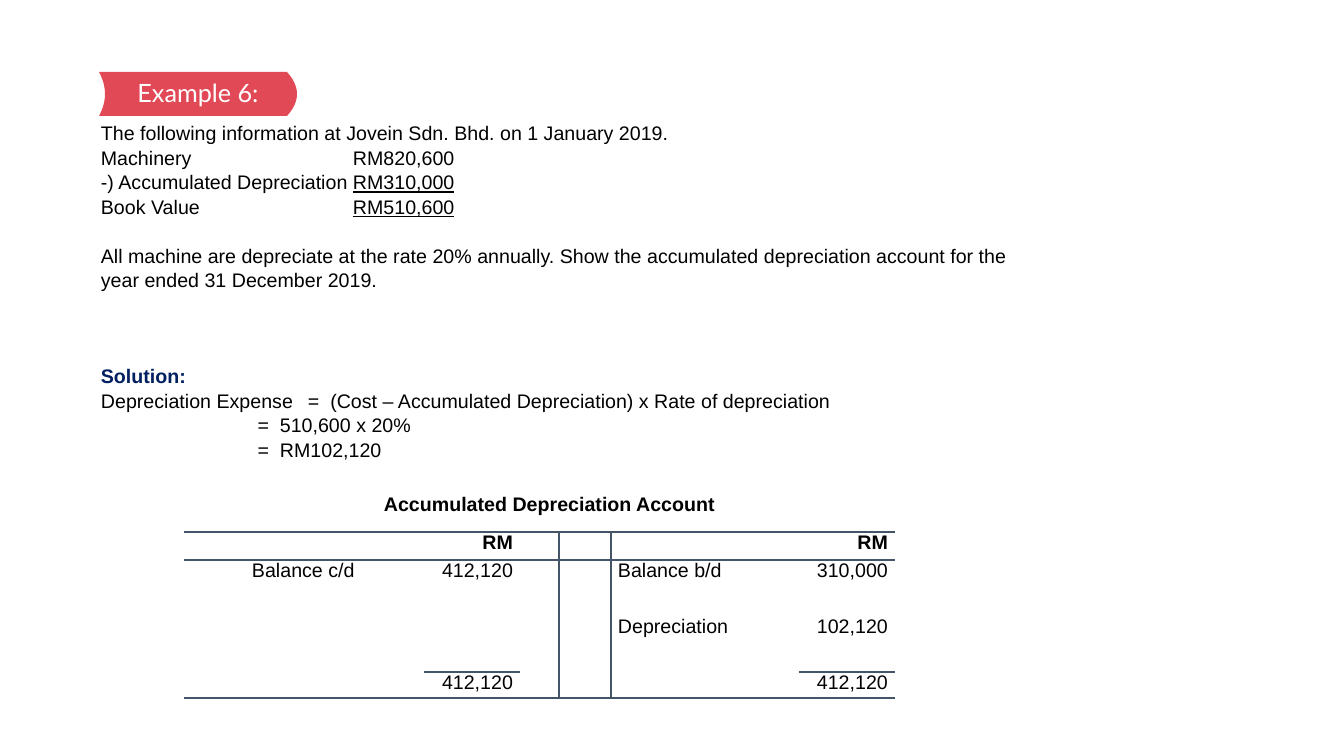
from lxml import etree
from pptx import Presentation
from pptx.dml.color import RGBColor
from pptx.enum.shapes import MSO_SHAPE
from pptx.enum.text import MSO_ANCHOR, PP_ALIGN
from pptx.oxml.ns import qn
from pptx.util import Pt

SCALE = 9144000 / 1008
RECTANGLE = MSO_SHAPE.RECTANGLE
TOP, MIDDLE = MSO_ANCHOR.TOP, MSO_ANCHOR.MIDDLE
LEFT, CENTER = PP_ALIGN.LEFT, PP_ALIGN.CENTER
RIGHT, JUSTIFY = PP_ALIGN.RIGHT, PP_ALIGN.JUSTIFY

WHITE, BLACK, NAVY, RED, SLATE = "FFFFFF", "000000", "002060", "E24956", "445469"

QUESTION = [
    (0, [("The following information at Jovein Sdn. Bhd. on 1 January 2019.", {})]),
    (0, [("Machinery\t\t\t\tRM820,600", {})]),
    (0, [("-) Accumulated Depreciation\t", {}), ("RM310,000", {"underline": True})]),
    (0, [("Book Value\t\t\t\t", {}), ("RM510,600", {"underline": True})]),
    (24, [("All machine are depreciate at the rate 20% annually. Show the accumulated "
           "depreciation account for the year ended 31 December 2019.", {})]),
    (71, [("Solution:", {"bold": True, "color": NAVY})]),
    (0, [("Depreciation Expense\t =  (Cost – Accumulated Depreciation) x Rate of depreciation", {})]),
    (0, [("\t\t\t =  510,600 x 20%", {})]),
    (0, [("\t\t\t =  RM102,120", {})]),
]

COLUMNS = [61, 179, 96, 39, 52, 188, 96]
ROWS = [28, 56, 56, 26]
AMOUNTS = (2, 6)
DIVIDERS = (4, 5)
FULL_RULES = (0, 1, 4)
TOTAL_RULE = 3
ENTRIES = [
    {2: "RM", 6: "RM"},
    {1: "Balance c/d", 2: "412,120", 5: "Balance b/d", 6: "310,000"},
    {5: "Depreciation", 6: "102,120"},
    {2: "412,120", 6: "412,120"},
]


def px(length):
    return round(length * SCALE)


def rgb(value):
    return RGBColor.from_string(value)


def add_text(para, text, size=14, font="Arial", color=BLACK, bold=False, underline=False):
    span = para.add_run()
    span.text = text
    span.font.size = Pt(size)
    span.font.name = font
    span.font.color.rgb = rgb(color)
    span.font.bold = bold
    span.font.underline = underline


def style_shape(shape, fill, anchor):
    shape.shadow.inherit = False
    shape.fill.solid()
    shape.fill.fore_color.rgb = rgb(fill)
    shape.line.fill.background()
    shape.text_frame.word_wrap = True
    shape.text_frame.vertical_anchor = anchor


def add_panel(page, box):
    panel = page.shapes.add_shape(RECTANGLE, *map(px, box))
    style_shape(panel, WHITE, MIDDLE)
    return panel.text_frame


def add_ribbon(page, box, steps=12):
    left, top, width, height = box
    notch, bulge = 6, 10
    turns = [2 * step / steps - 1 for step in range(steps + 1)]

    def arc(edge, depth):
        return [(px(edge + depth * (1 - turn ** 2)), px(top + height * (1 + turn) / 2))
                for turn in turns]

    outline = arc(left + width - bulge, bulge) + arc(left, notch)[::-1]
    builder = page.shapes.build_freeform(*outline[0], scale=1.0)
    builder.add_line_segments(outline[1:], close=True)
    ribbon = builder.convert_to_shape()
    style_shape(ribbon, RED, TOP)
    para = ribbon.text_frame.paragraphs[0]
    para.alignment = CENTER
    add_text(para, "Example 6:", size=18, font="Lato", color=WHITE)


def add_question(page, box):
    frame = add_panel(page, box)
    for index, (gap, spans) in enumerate(QUESTION):
        para = frame.add_paragraph() if index else frame.paragraphs[0]
        para.alignment = LEFT
        para.line_spacing = 1.05
        para.space_before = px(gap)
        for text, style in spans:
            add_text(para, text, **style)


def add_account_title(page, box):
    para = add_panel(page, box).paragraphs[0]
    para.alignment = LEFT
    add_text(para, "Accumulated Depreciation Account", bold=True)


def add_border(cell, side, visible):
    line = etree.SubElement(cell._tc.get_or_add_tcPr(), qn(f"a:ln{side}"), w=str(Pt(1)))
    if visible:
        fill = etree.SubElement(line, qn("a:solidFill"))
        etree.SubElement(fill, qn("a:srgbClr"), val=SLATE)
    else:
        etree.SubElement(line, qn("a:noFill"))


def is_ruled(rule, column):
    return rule in FULL_RULES or (rule == TOTAL_RULE and column in AMOUNTS)


def fill_cell(cell, row, column):
    cell.margin_left = cell.margin_right = px(7)
    cell.margin_top = cell.margin_bottom = 0
    add_border(cell, "L", column in DIVIDERS)
    add_border(cell, "R", column + 1 in DIVIDERS)
    add_border(cell, "T", is_ruled(row, column))
    add_border(cell, "B", is_ruled(row + 1, column))
    cell.fill.solid()
    cell.fill.fore_color.rgb = rgb(WHITE)
    para = cell.text_frame.paragraphs[0]
    para.alignment = RIGHT if column in AMOUNTS else JUSTIFY
    if column in ENTRIES[row]:
        add_text(para, ENTRIES[row][column], bold=row == 0)
    else:
        etree.SubElement(para._p, qn("a:endParaRPr"), sz="1400")


def add_account(page, left, top):
    box = (left, top, sum(COLUMNS), sum(ROWS))
    account = page.shapes.add_table(len(ROWS), len(COLUMNS), *map(px, box)).table
    account.first_row = account.horz_banding = False
    for column, width in enumerate(COLUMNS):
        account.columns[column].width = px(width)
    for row, height in enumerate(ROWS):
        account.rows[row].height = px(height)
        for column in range(len(COLUMNS)):
            fill_cell(account.cell(row, column), row, column)


def main():
    deck = Presentation()
    deck.slide_width, deck.slide_height = px(1344), px(756)
    page = deck.slides.add_slide(deck.slide_layouts[6])
    add_account(page, 184, 532)
    add_question(page, (91, 119, 962, 343))
    add_account_title(page, (374, 487, 362, 34))
    add_ribbon(page, (99, 72, 198, 44))
    deck.save("out.pptx")


if __name__ == "__main__":
    main()
